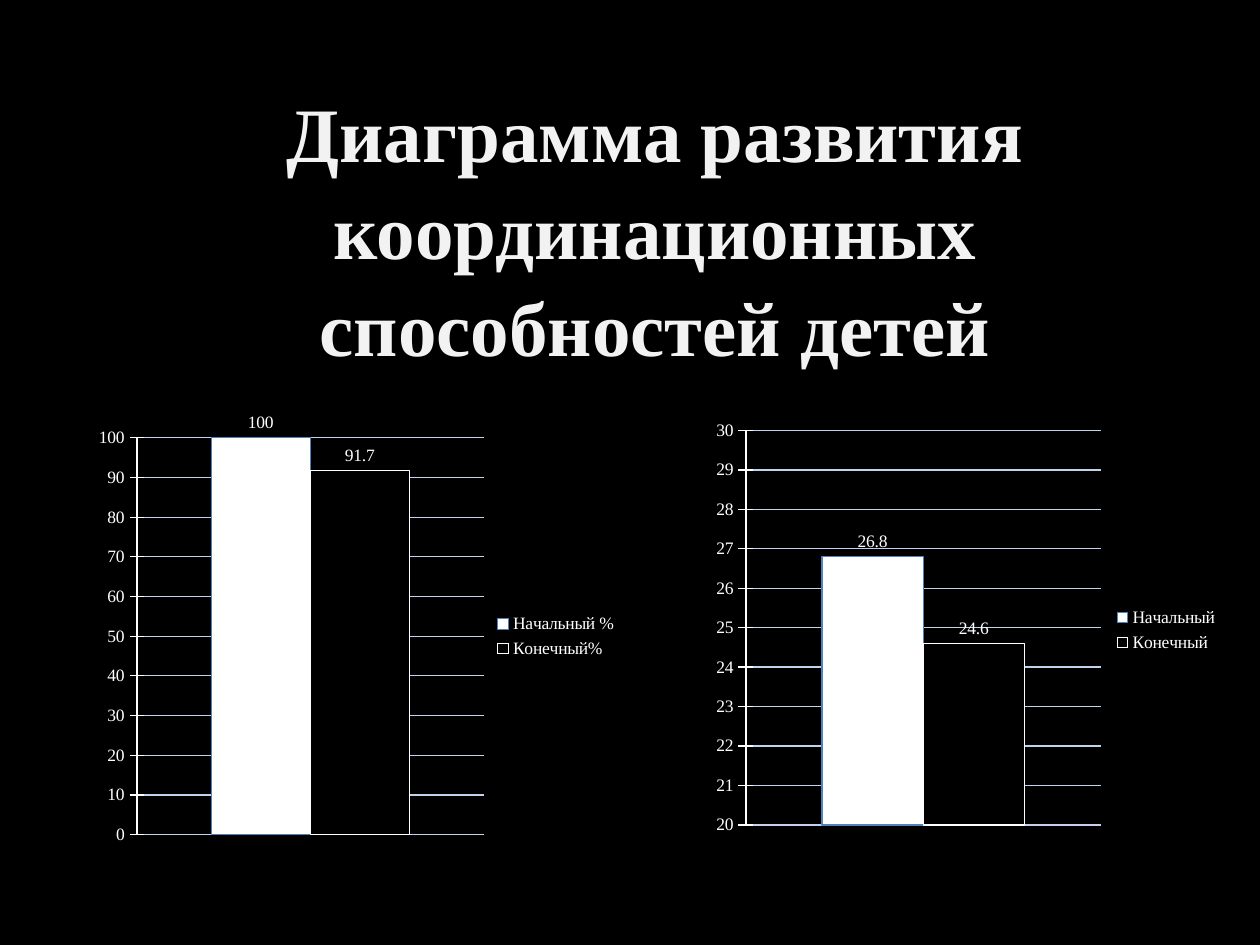
from pptx import Presentation
from pptx.chart.data import CategoryChartData as Data
from pptx.dml.color import RGBColor as RGB
from pptx.enum.chart import (XL_CHART_TYPE as Kind, XL_LABEL_POSITION as Spot,
                             XL_LEGEND_POSITION as Side, XL_TICK_MARK as Tick)
from pptx.enum.text import MSO_ANCHOR as Anchor, PP_ALIGN as Align
from pptx.oxml import parse_xml
from pptx.oxml.ns import nsdecls
from pptx.util import Inches, Pt

FONT = "Times New Roman"
COLORS = {"back": "000000", "title": "F2F2F2", "text": "FFFFFF",
          "first": "FFFFFF", "last": "000000", "edge": "4F81BD",
          "grid": "C2D1ED"}


def color(name):
    return RGB.from_string(COLORS[name])


def style(font, size, tint, bold=False):
    font.name, font.size, font.bold = FONT, Pt(size), bold
    font.color.rgb = color(tint)


def write(shape, text, size=18, tint="text", bold=False,
          align=Align.LEFT, anchor=Anchor.TOP, spacing=1.0):
    frame = shape.text_frame
    frame.word_wrap = True
    frame.vertical_anchor = anchor
    para = frame.paragraphs[0]
    para.alignment, para.line_spacing = align, spacing
    run = para.add_run()
    run.text = text
    style(run.font, size, tint, bold)


def stroke(line, tint):
    line.color.rgb = color(tint)
    line.width = Pt(0.75)


def place_plot(chart, area):
    """Fix the inner plot area, in fractions of the chart."""
    parts = "".join(f'<c:{key} val="{val}"/>' for key, val in zip("xywh", area))
    plot = chart._chartSpace.chart.plotArea
    for old in plot.findall("{*}layout"):
        plot.remove(old)
    plot.insert(0, parse_xml(
        f'<c:layout {nsdecls("c")}><c:manualLayout>'
        '<c:layoutTarget val="inner"/><c:xMode val="edge"/><c:yMode val="edge"/>'
        f'{parts}</c:manualLayout></c:layout>'))


def add_bars(slide, box, names, values, low, high, step, area):
    data = Data()
    data.categories = ["1"]
    for name, value in zip(names, values):
        data.add_series(name, [value])
    chart = slide.shapes.add_chart(
        Kind.COLUMN_CLUSTERED, *map(Inches, box), data).chart
    style(chart.font, 10, "text")
    chart.has_title = False
    place_plot(chart, area)

    # Legend
    chart.has_legend = True
    chart.legend.position = Side.RIGHT
    chart.legend.include_in_layout = False

    # Axes
    chart.category_axis.visible = False
    axis = chart.value_axis
    axis.minimum_scale, axis.maximum_scale, axis.major_unit = low, high, step
    axis.major_tick_mark = Tick.CROSS
    axis.tick_labels.number_format = "General"
    axis.tick_labels.number_format_is_linked = False
    stroke(axis.format.line, "text")
    axis.has_major_gridlines = True
    stroke(axis.major_gridlines.format.line, "grid")

    # Columns and their values
    plot = chart.plots[0]
    plot.gap_width, plot.overlap, plot.vary_by_categories = 150, 0, False
    for series, fill, edge in zip(plot.series, ("first", "last"),
                                  ("edge", "text")):
        series.format.fill.solid()
        series.format.fill.fore_color.rgb = color(fill)
        stroke(series.format.line, edge)
        labels = series.data_labels
        labels.show_value = True
        labels.position = Spot.OUTSIDE_END
        labels.number_format = "General"
        labels.number_format_is_linked = False
        style(labels.font, 10, "text")


def main():
    deck = Presentation()
    deck.slide_width, deck.slide_height = Inches(10), Inches(7.5)
    slide = deck.slides.add_slide(deck.slide_layouts[5])
    slide.background.fill.solid()
    slide.background.fill.fore_color.rgb = color("back")

    # Title
    title = slide.shapes.title
    title.left, title.top = Inches(0.7), Inches(0.86)
    title.width, title.height = Inches(9), Inches(1.88)
    write(title, "Диаграмма развития координационных способностей детей",
          size=44, tint="title", bold=True, align=Align.CENTER,
          anchor=Anchor.MIDDLE, spacing=1.05)

    # Charts: percent on the left, score on the right
    add_bars(slide, (0.7, 3.28, 4.3, 3.52), ("Начальный %", "Конечный%"),
             (100, 91.7), 0, 100, 10, (0.09, 0.05, 0.64, 0.9))
    add_bars(slide, (5.63, 3.28, 4.14, 3.44), ("Начальный", "Конечный"),
             (26.8, 24.6), 20, 30, 1, (0.07, 0.04, 0.68, 0.91))
    deck.save("out.pptx")


if __name__ == "__main__":
    main()
